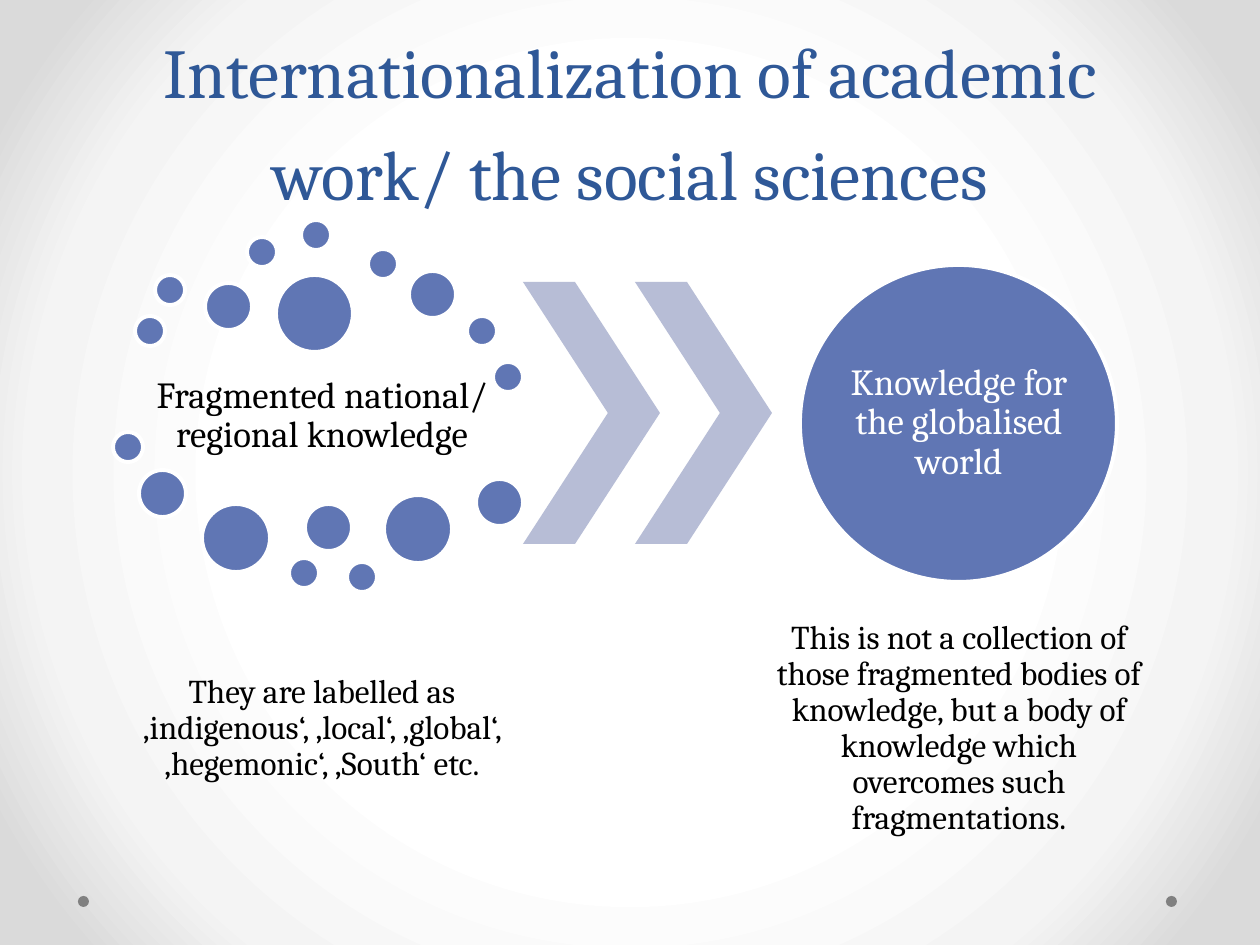
from pptx import Presentation
from pptx.dml.color import RGBColor
from pptx.enum.shapes import MSO_SHAPE
from pptx.enum.text import MSO_ANCHOR, PP_ALIGN
from pptx.oxml import parse_xml
from pptx.oxml.ns import nsdecls
from pptx.util import Emu, Pt

SCALE = 914400 / 126
BLUE = RGBColor(0x60, 0x76, 0xB4)
PALE_BLUE = RGBColor(0xB7, 0xBD, 0xD6)
TITLE_BLUE = RGBColor(0x2F, 0x58, 0x97)
GRAY = RGBColor(0x80, 0x80, 0x80)
WHITE = RGBColor(0xFF, 0xFF, 0xFF)
BLACK = RGBColor(0x00, 0x00, 0x00)

deck = Presentation()
deck.slide_width, deck.slide_height = Emu(round(1260 * SCALE)), Emu(round(945 * SCALE))
page = deck.slides.add_slide(deck.slide_layouts[6])


def add_shape(kind, bounds, color, outlined=False):
    shape = page.shapes.add_shape(kind, *[Emu(round(n * SCALE)) for n in bounds])
    shape.shadow.inherit = False
    shape.fill.solid()
    shape.fill.fore_color.rgb = color
    if outlined:
        shape.line.color.rgb = WHITE
        shape.line.width = Pt(2.25)
    else:
        shape.line.fill.background()
    return shape


def add_text(text, bounds, size, color, inset=4, anchor=MSO_ANCHOR.MIDDLE, spacing=0.9):
    box = page.shapes.add_textbox(*[Emu(round(n * SCALE)) for n in bounds])
    margin = Emu(round(inset * SCALE))
    frame_format = {
        "word_wrap": True,
        "vertical_anchor": anchor,
        "margin_left": margin,
        "margin_right": margin,
        "margin_top": margin,
        "margin_bottom": margin,
    }
    for name, value in frame_format.items():
        setattr(box.text_frame, name, value)
    para = box.text_frame.paragraphs[0]
    para.alignment = PP_ALIGN.CENTER
    para.line_spacing = spacing
    span = para.add_run()
    span.text = text
    for name, value in {"name": "Cambria", "size": Pt(size)}.items():
        setattr(span.font, name, value)
    span.font.color.rgb = color


page.background.fill.gradient()
gradient = page.background.fill._xPr.gradFill
stops = "".join(
    f'<a:gs pos="{position}000"><a:srgbClr val="{color}"/></a:gs>'
    for position, color in [(50, "FFFFFF"), (76, "F4F4F4"), (92, "DADADA")]
)
gradient.getparent().replace(gradient, parse_xml(
    f'<a:gradFill {nsdecls("a")} rotWithShape="1"><a:gsLst>{stops}</a:gsLst>'
    '<a:path path="circle"><a:fillToRect l="50000" t="50000" r="50000" b="50000"/></a:path>'
    '</a:gradFill>'
))

for left in (1166, 78):
    add_shape(MSO_SHAPE.OVAL, (left, 896, 11, 11), GRAY)

add_text("Internationalization of academic work/ the social sciences",
         (63, 0, 1134, 220), 40, TITLE_BLUE, inset=6,
         anchor=MSO_ANCHOR.BOTTOM, spacing=Pt(58))
add_text("Fragmented national/ regional knowledge", (135, 354, 374, 124), 21, BLACK)
add_text("They are labelled as ‚indigenous‘, ‚local‘, ‚global‘, ‚hegemonic‘, ‚South‘ etc.",
         (135, 614, 374, 230), 19, BLACK)

fragments = {
    30: [(135, 316), (155, 275), (247, 237), (301, 220), (368, 249), (467, 316),
         (493, 362), (113, 432), (289, 558), (347, 562)],
    47: [(205, 283), (409, 271), (139, 470), (305, 504), (476, 479)],
    68: [(202, 504), (384, 495)],
    77: [(276, 275)],
}
for diameter, corners in fragments.items():
    for left, top in corners:
        add_shape(MSO_SHAPE.OVAL, (left, top, diameter, diameter), BLUE, outlined=True)

for left in (523, 635):
    chevron = add_shape(MSO_SHAPE.CHEVRON, (left, 282, 137, 262), PALE_BLUE)
    chevron.adjustments[0] = 0.62

add_shape(MSO_SHAPE.OVAL, (800, 265, 317, 317), BLUE, outlined=True)
add_text("Knowledge for the globalised world", (847, 311, 224, 224), 21, WHITE, inset=0)
add_text("This is not a collection of those fragmented bodies of knowledge, "
         "but a body of knowledge which overcomes such fragmentations.",
         (772, 614, 374, 230), 19, BLACK)

deck.save("out.pptx")
